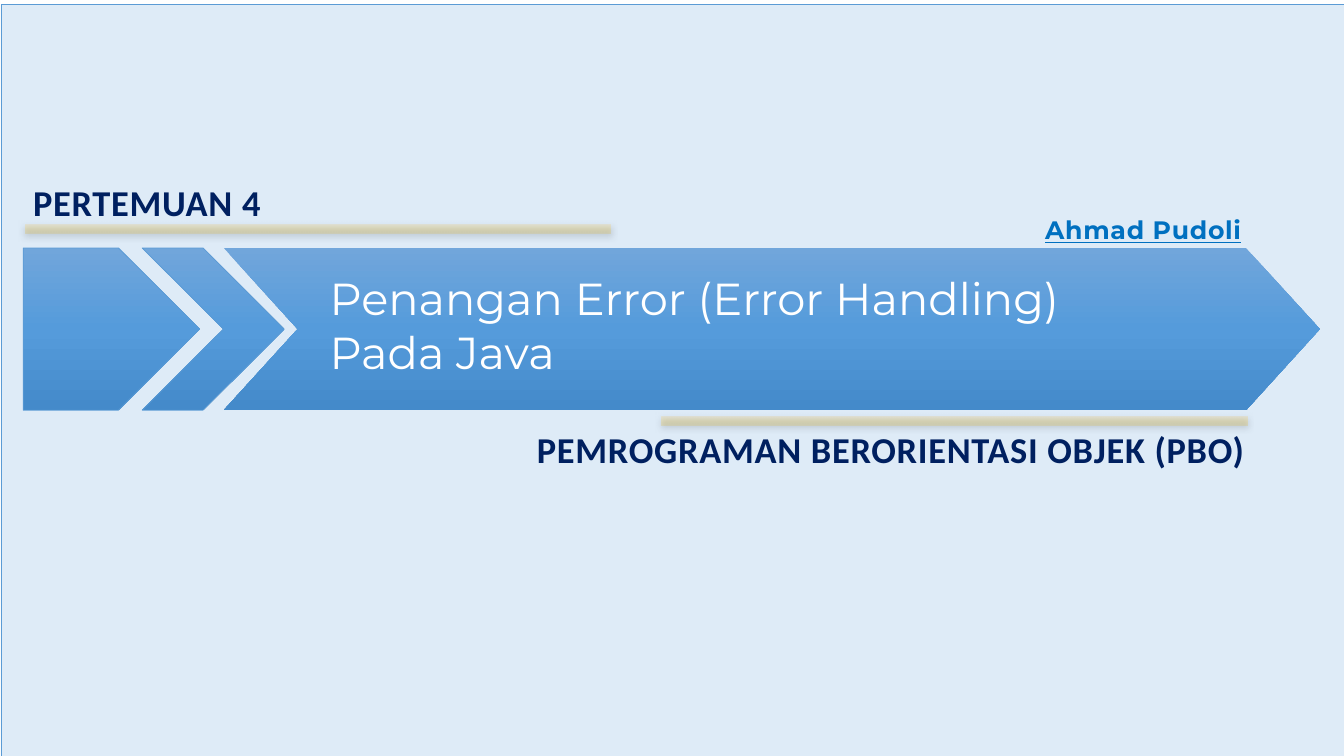
from pptx import Presentation
from pptx.dml.color import RGBColor
from pptx.enum.shapes import MSO_SHAPE
from pptx.enum.text import MSO_ANCHOR, MSO_AUTO_SIZE, PP_ALIGN
from pptx.oxml import parse_xml
from pptx.oxml.ns import nsdecls, qn
from pptx.util import Inches, Pt

RECT, PLATE, CHEVRON = MSO_SHAPE.RECTANGLE, MSO_SHAPE.PENTAGON, MSO_SHAPE.CHEVRON
LEFT, RIGHT = PP_ALIGN.LEFT, PP_ALIGN.RIGHT

PALE = RGBColor(0xDE, 0xEB, 0xF7)
BLUE = RGBColor(0x5B, 0x9B, 0xD5)
NAVY = RGBColor(0x00, 0x20, 0x60)
LINK = RGBColor(0x00, 0x70, 0xC0)
WHITE = RGBColor(0xFF, 0xFF, 0xFF)
BLUE_STOPS = [RGBColor(0x71, 0xA6, 0xDB), RGBColor(0x55, 0x9B, 0xDB),
              RGBColor(0x44, 0x8A, 0xCA)]
GOLD_STOPS = [RGBColor(0xFF, 0xC6, 0x4B), RGBColor(0xFF, 0xC0, 0x00),
              RGBColor(0xE3, 0xAB, 0x00)]

# Content
TITLE = "Penangan Error (Error Handling)\nPada Java"
HEADING = dict(size=26, color=NAVY, bold=True, spacing=50)
LABELS = [  # text, box, format
    ("PERTEMUAN 4", (0.23, 1.82, 4.67, 0.36), HEADING),
    ("PEMROGRAMAN BERORIENTASI OBJEK (PBO)", (1.99, 4.27, 10.46, 0.36),
     dict(HEADING, align=RIGHT)),
    ("Ahmad Pudoli", (8.92, 2.1, 3.49, 0.36),
     dict(font="Montserrat", size=18, color=LINK, bold=True, underline=True,
          spacing=50, align=RIGHT)),
]
ARROW_TOP, ARROW_H = 2.46, 1.61
ARROWS = [  # shape, left, width, point depth, outline
    (PLATE, 0.23, 1.75, 0.5, BLUE),
    (CHEVRON, 1.41, 1.41, 0.572, BLUE),
    (CHEVRON, 2.22, 10.87, 0.455, None),
]
BAR_W, BAR_H, BAR_OPACITY = 5.81, 0.09, 20
BARS = [(0.25, 2.23), (6.56, 4.13)]


def add_box(kind, x, y, w, h, line=None):
    shape = s.shapes.add_shape(kind, Inches(x), Inches(y), Inches(w), Inches(h))
    shape.shadow.inherit = False
    if line is None:
        shape.line.fill.background()
    else:
        shape.line.color.rgb = line
        shape.line.width = Pt(0.5)
    return shape


def fill_gradient(shape, colors, opacity=100):
    stops = "".join(
        f'<a:gs pos="{i * 50000}"><a:srgbClr val="{c}">'
        f'<a:alpha val="{opacity * 1000}"/></a:srgbClr></a:gs>'
        for i, c in enumerate(colors))
    shape.fill.gradient()
    sp_pr = shape.element.spPr
    sp_pr.replace(sp_pr.find(qn("a:gradFill")), parse_xml(
        f'<a:gradFill {nsdecls("a")} rotWithShape="1"><a:gsLst>{stops}</a:gsLst>'
        '<a:lin ang="5400000" scaled="0"/></a:gradFill>'))


def add_shadow(shape):
    shape.element.spPr.find(qn("a:effectLst")).append(parse_xml(
        f'<a:outerShdw {nsdecls("a")} blurRad="{Pt(4.5)}" dist="{Pt(1.5)}" '
        'dir="5400000" algn="ctr" rotWithShape="0"><a:srgbClr val="000000">'
        '<a:alpha val="63000"/></a:srgbClr></a:outerShdw>'))


def set_text(shape, text, size, color, font="Calibri", bold=False,
             underline=False, spacing=0, align=LEFT):
    tf = shape.text_frame
    tf.word_wrap = True
    tf.auto_size = MSO_AUTO_SIZE.NONE
    tf.vertical_anchor = MSO_ANCHOR.MIDDLE
    p = tf.paragraphs[0]
    p.text = text
    p.alignment = align
    for r in p.runs:
        r.font.name, r.font.size = font, Pt(size)
        r.font.bold, r.font.underline = bold, underline
        r.font.color.rgb = color
        if spacing:
            r.font._element.set("spc", str(spacing))


prs = Presentation()
prs.slide_width, prs.slide_height = Inches(13.33), Inches(7.5)
s = prs.slides.add_slide(prs.slide_layouts[5])

# Backdrop
backdrop = add_box(RECT, 0.01, 0.04, 13.33, 7.5, BLUE)
backdrop.fill.solid()
backdrop.fill.fore_color.rgb = PALE

# Arrow band
for kind, x, w, depth, line in ARROWS:
    arrow = add_box(kind, x, ARROW_TOP, w, ARROW_H, line)
    arrow.adjustments[0] = depth
    fill_gradient(arrow, BLUE_STOPS)

# Gold bars
for x, y in BARS:
    bar = add_box(RECT, x, y, BAR_W, BAR_H)
    fill_gradient(bar, GOLD_STOPS, BAR_OPACITY)
    add_shadow(bar)

# Title, brought in front of the arrows
title = s.shapes.title
title.left, title.top = Inches(3.17), Inches(2.65)
title.width, title.height = Inches(9.43), Inches(1.14)
set_text(title, TITLE, size=32, color=WHITE, font="Montserrat")
title.element.getparent().append(title.element)

# Labels
for text, box, fmt in LABELS:
    set_text(s.shapes.add_textbox(*map(Inches, box)), text, **fmt)

prs.save("out.pptx")
